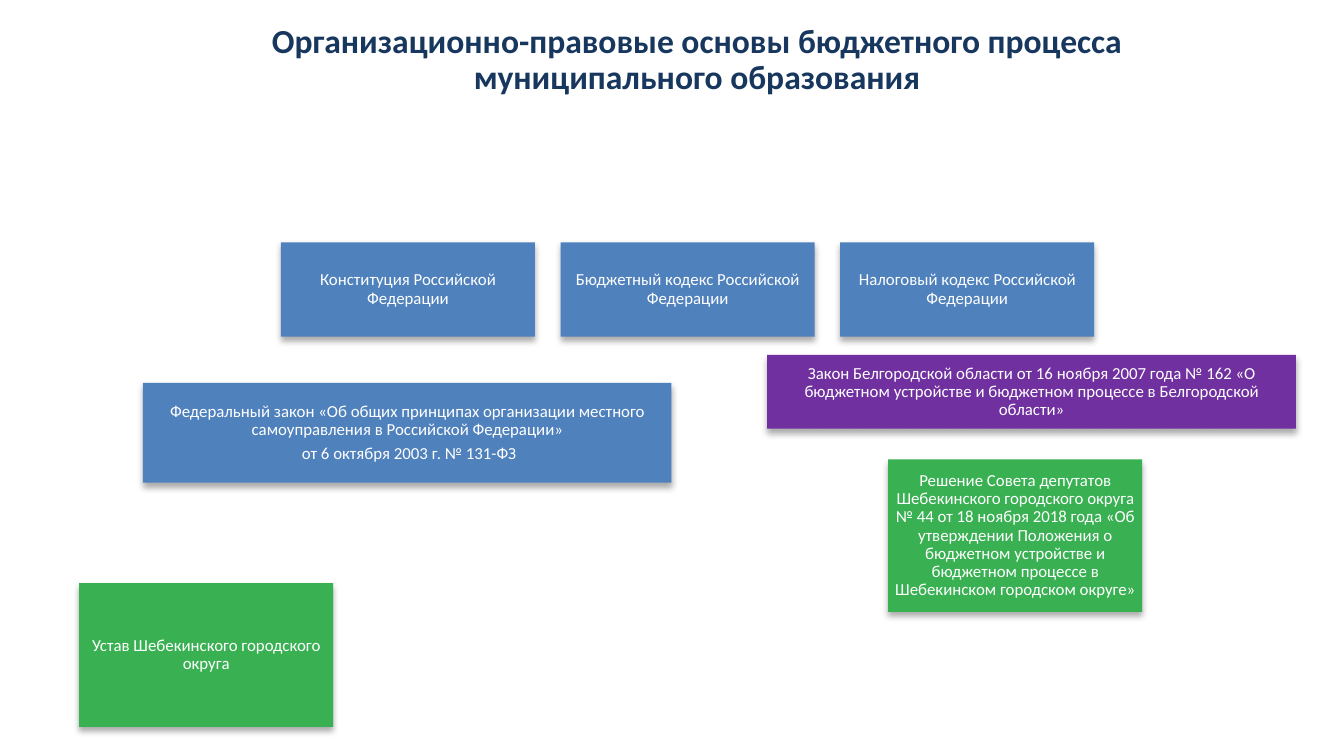
"""Build the slide on the legal foundations of the municipal budget process."""
from dataclasses import dataclass

from lxml.etree import SubElement
from pptx import Presentation
from pptx.dml.color import RGBColor
from pptx.enum.shapes import MSO_SHAPE as Shape
from pptx.enum.text import MSO_ANCHOR as Anchor, PP_ALIGN as Align
from pptx.oxml.ns import qn
from pptx.util import Pt

FONT = "Calibri"
FEDERAL, REGIONAL, LOCAL = "4F81BD", "7030A0", "39B153"
NARROW, WIDE = 136.1, 283.2
CODE_LEFT, CODE_STEP, CODE_TOP, CODE_HEIGHT = 150.5, 149.8, 129.8, 50.6
CODES = ("Конституция", "Бюджетный кодекс", "Налоговый кодекс")
TITLE = "Организационно-правовые основы бюджетного процесса \vмуниципального образования "


@dataclass(frozen=True)
class LawBox:
    left: float
    top: float
    width: float
    height: float
    fill: str
    paragraphs: tuple[str, ...]


LAWS = [
    *(LawBox(CODE_LEFT + index * CODE_STEP, CODE_TOP, NARROW, CODE_HEIGHT, FEDERAL,
             (f"{name} Российской Федерации",))
      for index, name in enumerate(CODES)),
    LawBox(76.5, 205.1, WIDE, 53.5, FEDERAL,
           ("Федеральный закон «Об общих принципах организации местного "
            "самоуправления в Российской Федерации»",
            " от 6 октября 2003 г. № 131-ФЗ")),
    LawBox(411, 190.1, WIDE, 39.6, REGIONAL,
           ("Закон Белгородской области от 16 ноября 2007 года № 162 «О бюджетном "
            "устройстве и бюджетном процессе в Белгородской области»",)),
    LawBox(42.4, 312.5, NARROW, 77, LOCAL,
           ("Устав Шебекинского городского округа",)),
    LawBox(475.8, 246.2, NARROW, 81.7, LOCAL,
           ("Решение Совета депутатов Шебекинского городского округа № 44 "
            "от 18 ноября 2018 года «Об утверждении Положения о бюджетном устройстве "
            "и бюджетном процессе в Шебекинском городском округе»",)),
]


def color(value: str) -> RGBColor:
    return RGBColor.from_string(value)


def apply(target, values: dict) -> None:
    for name, value in values.items():
        setattr(target, name, value)


def write(box, paragraphs: tuple[str, ...], size: float, ink: str,
          bold: bool, inset: tuple[float, float]) -> None:
    frame = box.text_frame
    side, edge = map(Pt, inset)
    apply(frame, {"word_wrap": True, "vertical_anchor": Anchor.MIDDLE,
                  "margin_left": side, "margin_right": side,
                  "margin_top": edge, "margin_bottom": edge})
    for index, text in enumerate(paragraphs):
        para = frame.add_paragraph() if index else frame.paragraphs[0]
        last = index == len(paragraphs) - 1
        para.text = text
        apply(para, {"alignment": Align.CENTER, "line_spacing": 0.9,
                     "space_after": Pt(0 if last else 0.35 * size)})
        for span in para.runs:
            apply(span.font, {"name": FONT, "size": Pt(size), "bold": bold})
            span.font.color.rgb = color(ink)


def add_shadow(box) -> None:
    box.shadow.inherit = False
    effects = box._element.spPr.find(qn("a:effectLst"))
    shadow = SubElement(effects, qn("a:outerShdw"), blurRad=str(Pt(3.5)),
                        dist=str(Pt(2.2)), dir="5400000", rotWithShape="0")
    tint = SubElement(shadow, qn("a:srgbClr"), val="000000")
    SubElement(tint, qn("a:alpha"), val="32000")


def draw_title(page) -> None:
    box = page.shapes.add_textbox(Pt(70.6), Pt(8.6), Pt(595.4), Pt(47.5))
    write(box, (TITLE,), 18, "17375E", True, (7.2, 3.6))
    box.text_frame.paragraphs[0]._p.get_or_add_pPr().set("marL", str(Pt(14.4)))


def draw_law(page, law: LawBox) -> None:
    box = page.shapes.add_shape(Shape.RECTANGLE, Pt(law.left), Pt(law.top),
                                Pt(law.width), Pt(law.height))
    box.fill.solid()
    box.fill.fore_color.rgb = color(law.fill)
    box.line.fill.background()
    add_shadow(box)
    write(box, law.paragraphs, 9, "FFFFFF", False, (2.9, 2.9))


def main() -> None:
    deck = Presentation()
    apply(deck, {"slide_width": Pt(720), "slide_height": Pt(405)})
    page = deck.slides.add_slide(deck.slide_layouts[6])
    draw_title(page)
    for law in LAWS:
        draw_law(page, law)
    deck.save("out.pptx")


if __name__ == "__main__":
    main()
